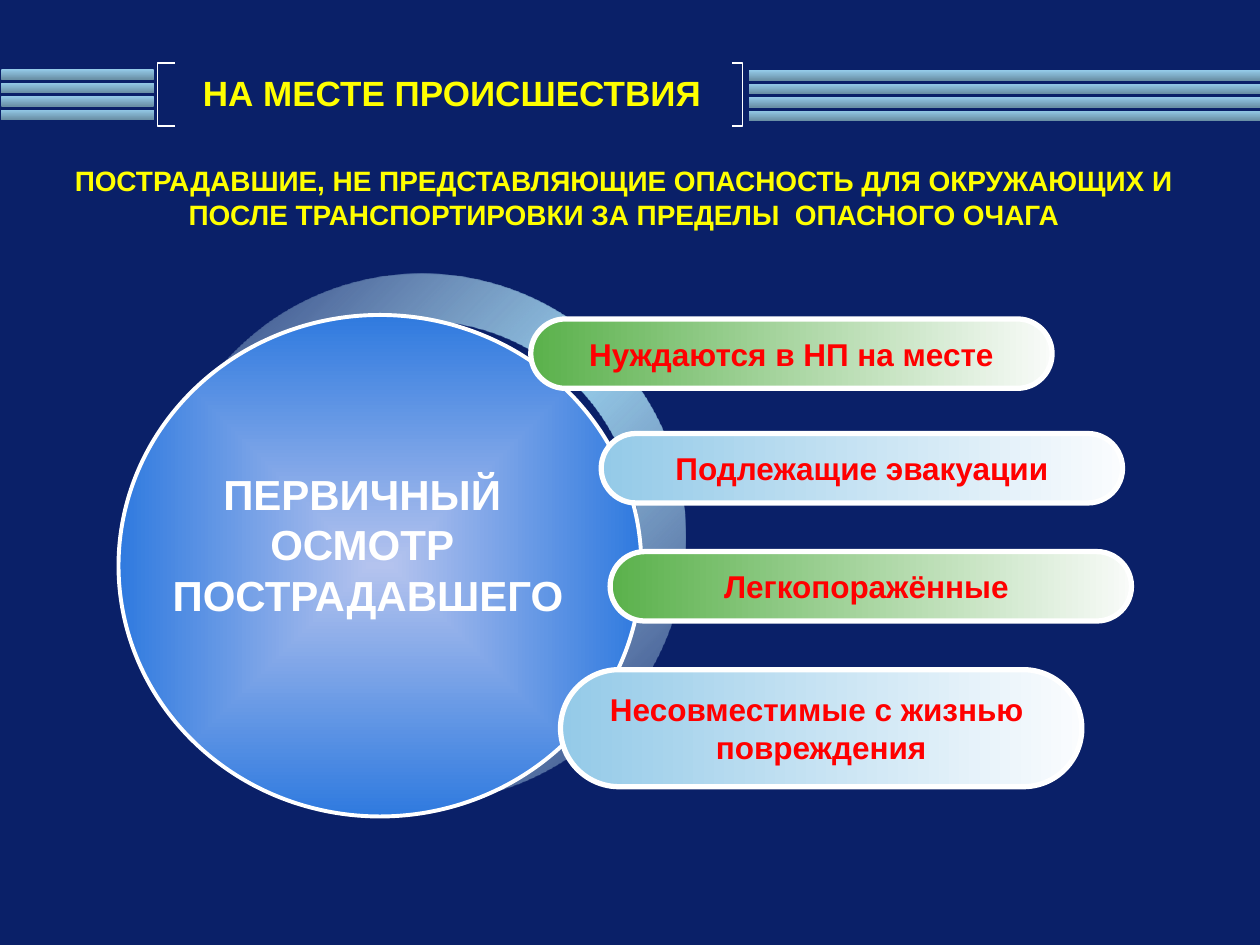
"""Builds the slide about the first examination of casualties at the scene."""
from lxml import etree
from pptx import Presentation
from pptx import util as u
from pptx.dml.color import RGBColor
from pptx.enum import shapes, text
from pptx.oxml.ns import qn

TITLE = "НА МЕСТЕ ПРОИСШЕСТВИЯ"
SUBTITLE = ("ПОСТРАДАВШИЕ, НЕ ПРЕДСТАВЛЯЮЩИЕ ОПАСНОСТЬ ДЛЯ ОКРУЖАЮЩИХ И "
            "ПОСЛЕ ТРАНСПОРТИРОВКИ ЗА ПРЕДЕЛЫ  ОПАСНОГО ОЧАГА")
CENTRE = ["ПЕРВИЧНЫЙ ", "ОСМОТР ", "ПОСТРАДАВШЕГО"]
GREEN = [(0, "5AB14B", 100), (100, "F9FBF9", 100)]
SKY = [(0, "94CAE8", 100), (100, "FAFCFE", 100)]
STEEL = [(0, "94CAE8", 100), (100, "6A90A6", 100)]
BLUE = [(0, "B4C3EE", 100), (100, "2F7ADF", 100)]
HALO = [(0, "C7E1F1", 12), (50, "94CAE8", 100), (100, "C7E1F1", 12)]
GROUPS = [
    (["Нуждаются в НП на месте"], (10.7, 6.43, 10.51, 1.4), GREEN),
    (["Подлежащие эвакуации"], (12.12, 8.74, 10.51, 1.4), SKY),
    (["Легкопоражённые "], (12.3, 11.12, 10.51, 1.4), GREEN),
    (["Несовместимые с жизнью ", "повреждения"], (11.3, 13.5, 10.51, 2.36), SKY),
]
BAR_STACKS = [(0.03, 1.4, 3.07), (15.09, 1.42, 10.31)]
BAR_COUNT, BAR_PITCH, BAR_HEIGHT = 4, 0.27, 0.2
BRACKETS = [(3.53, 3.18), (14.76, 14.97)]
BRACKET_TOP, BRACKET_BOTTOM = 1.27, 2.54


def colour(value):
    return RGBColor.from_string(value)


def lengths(box):
    return [u.Cm(value) for value in box]


def set_gradient(shape, stops, angle=None):
    shape.fill.gradient()
    gradient = shape._element.spPr.find(qn("a:gradFill"))
    for child in list(gradient):
        gradient.remove(child)
    stop_list = etree.SubElement(gradient, qn("a:gsLst"))
    for position, value, opacity in stops:
        stop = etree.SubElement(stop_list, qn("a:gs"), pos=str(position * 1000))
        tint = etree.SubElement(stop, qn("a:srgbClr"), val=value)
        if opacity < 100:
            etree.SubElement(tint, qn("a:alpha"), val=str(opacity * 1000))
    if angle is None:
        path = etree.SubElement(gradient, qn("a:path"), path="shape")
        sides = {side: "50000" for side in "ltrb"}
        etree.SubElement(path, qn("a:fillToRect"), **sides)
    else:
        etree.SubElement(gradient, qn("a:lin"), ang=str(angle * 60000), scaled="0")


def add_preset(slide, kind, box, stops, angle=None, line_width=0):
    shape = slide.shapes.add_shape(kind, *lengths(box))
    shape.shadow.inherit = False
    set_gradient(shape, stops, angle)
    if line_width:
        shape.line.color.rgb = colour("FFFFFF")
        shape.line.width = u.Pt(line_width)
    else:
        shape.line.fill.background()
    return shape


def write(shape, lines, size, value, wrap=True, anchor=text.MSO_ANCHOR.MIDDLE):
    frame = shape.text_frame
    frame.word_wrap = wrap
    frame.vertical_anchor = anchor
    for index, line in enumerate(lines):
        paragraph = frame.add_paragraph() if index else frame.paragraphs[0]
        paragraph.alignment = text.PP_ALIGN.CENTER
        run = paragraph.add_run()
        run.text = line
        run.font.name = "Arial"
        run.font.size = u.Pt(size)
        run.font.bold = True
        run.font.color.rgb = colour(value)


def add_text_shadow(shape):
    for paragraph in shape.text_frame.paragraphs:
        for run in paragraph.runs:
            effects = etree.Element(qn("a:effectLst"))
            shadow = etree.SubElement(effects, qn("a:outerShdw"),
                                      dist="35921", dir="2700000")
            etree.SubElement(shadow, qn("a:srgbClr"), val="000000")
            run.font.fill._xPr.find(qn("a:solidFill")).addnext(effects)


def add_bracket(slide, tip, spine):
    points = [lengths(point) for point in (
        (tip, BRACKET_TOP), (spine, BRACKET_TOP),
        (spine, BRACKET_BOTTOM), (tip, BRACKET_BOTTOM))]
    builder = slide.shapes.build_freeform(*points[0])
    builder.add_line_segments(points[1:], close=False)
    bracket = builder.convert_to_shape()
    bracket.shadow.inherit = False
    bracket.fill.background()
    bracket.line.color.rgb = colour("FFFFFF")
    bracket.line.width = u.Pt(0.75)


def main():
    presentation = Presentation()
    presentation.slide_width, presentation.slide_height = lengths((25.4, 19.05))
    slide = presentation.slides.add_slide(presentation.slide_layouts[5])
    slide.background.fill.solid()
    slide.background.fill.fore_color.rgb = colour("0A2068")
    kinds = shapes.MSO_SHAPE

    for left, top, width in BAR_STACKS:
        for index in range(BAR_COUNT):
            box = (left, top + index * BAR_PITCH, width, BAR_HEIGHT)
            add_preset(slide, kinds.RECTANGLE, box, STEEL, 90)
    for tip, spine in BRACKETS:
        add_bracket(slide, tip, spine)

    title = slide.shapes.title
    title.left, title.top, title.width, title.height = lengths((3.61, 1.07, 11, 1.57))
    write(title, [TITLE], 20, "FFFF00")

    halo = add_preset(slide, kinds.DONUT, (3.18, 5.51, 10.64, 10.64), HALO, 45)
    halo.adjustments[0] = 0.09
    add_preset(slide, kinds.OVAL, (2.39, 6.35, 10.54, 10.11), BLUE, line_width=2.25)

    for lines, box, stops in GROUPS:
        pill = add_preset(slide, kinds.ROUNDED_RECTANGLE, box, stops, 0, 3)
        pill.adjustments[0] = 0.5
        write(pill, lines, 18, "FF0000", wrap=False)

    centre = slide.shapes.add_textbox(*lengths((3.18, 9.32, 8.48, 3.33)))
    write(centre, CENTRE, 24, "FFFFFF", wrap=False, anchor=text.MSO_ANCHOR.TOP)
    add_text_shadow(centre)
    subtitle = slide.shapes.add_textbox(*lengths((0.58, 3.18, 24, 1.63)))
    write(subtitle, [SUBTITLE], 16, "FFFF00", anchor=text.MSO_ANCHOR.TOP)

    presentation.save("out.pptx")


if __name__ == "__main__":
    main()
